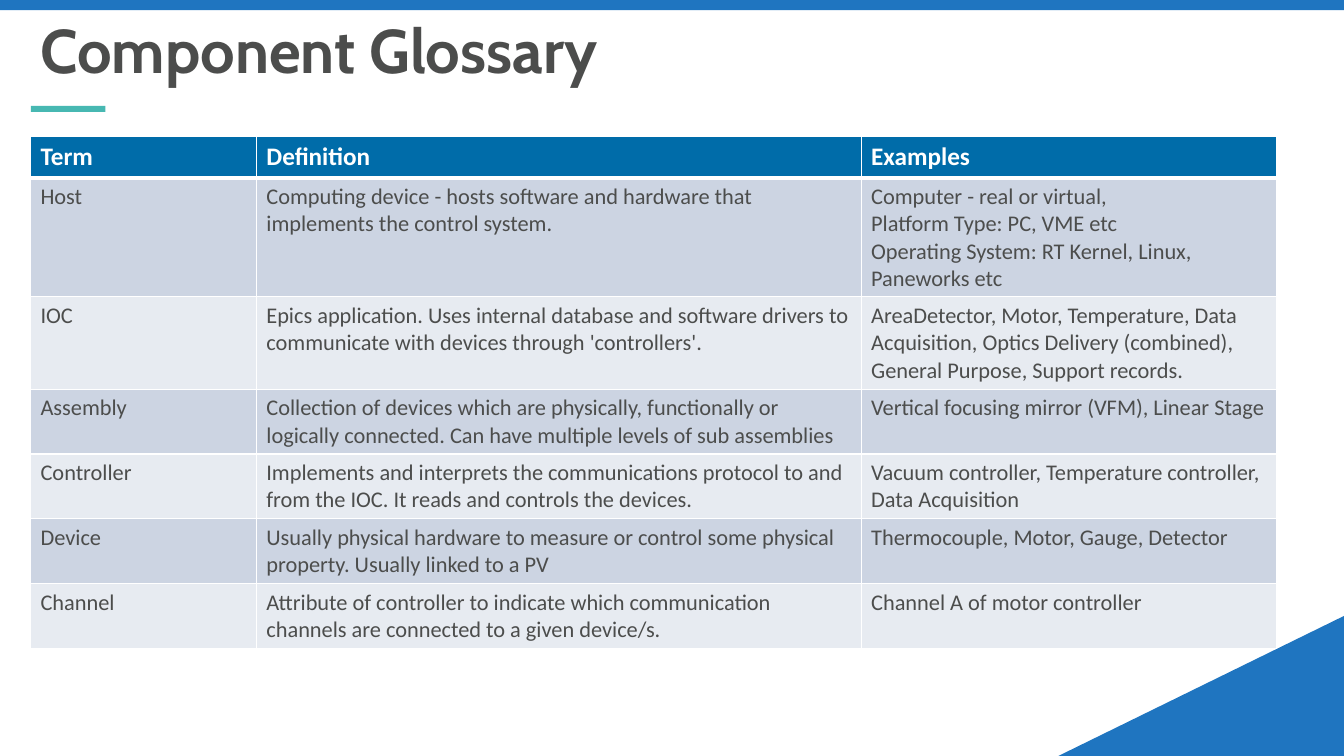
from lxml import etree
from pptx import Presentation
from pptx.dml.color import RGBColor
from pptx.enum import shapes, text
from pptx.oxml import ns
from pptx.util import Pt

BLUE, TEAL, HEADER, INK, WHITE = "1F75C0", "47B8B2", "006CA9", "4C4D4C", "FFFFFF"
BANDS = ["CCD4E2", "E7EBF1"]


def paint(target, color):
    """Give a shape or a cell a solid fill."""
    target.fill.solid()
    target.fill.fore_color.rgb = RGBColor.from_string(color)


def add_span(para, content, font, size, color, bold):
    span = para.add_run()
    span.text = content
    span.font.name = font
    span.font.size = Pt(size)
    span.font.bold = bold
    span.font.color.rgb = RGBColor.from_string(color)


deck = Presentation()
deck.slide_width, deck.slide_height = Pt(960), Pt(540)
page = deck.slides.add_slide(deck.slide_layouts[6])

# Corner triangle, top band and title accent
kinds = shapes.MSO_SHAPE
for kind, bounds, color in [
    (kinds.RIGHT_TRIANGLE, (756, 440, 204, 100), BLUE),
    (kinds.RECTANGLE, (0, 0, 960, 7.2), BLUE),
    (kinds.RECTANGLE, (22, 75.6, 53.3, 4.3), TEAL),
]:
    shape = page.shapes.add_shape(kind, *[Pt(length) for length in bounds])
    shape.shadow.inherit = False
    shape.line.fill.background()
    paint(shape, color)
    if kind == kinds.RIGHT_TRIANGLE:
        shape._element.spPr.xfrm.set("flipH", "1")

# Title
box = page.shapes.add_textbox(Pt(21.8), Pt(0), Pt(890), Pt(65.5))
box.text_frame.word_wrap = True
box.text_frame.vertical_anchor = text.MSO_ANCHOR.BOTTOM
para = box.text_frame.paragraphs[0]
para.line_spacing = 0.9
add_span(para, "Component Glossary", "Cabin", 44, INK, True)

# Glossary table
rows = [
    ("Term", "Definition", "Examples"),
    ("Host",
     "Computing device - hosts software and hardware that implements the control system.",
     "Computer - real or virtual, \nPlatform Type: PC, VME etc\n"
     "Operating System: RT Kernel, Linux, Paneworks etc"),
    ("IOC",
     "Epics application. Uses internal database and software drivers to communicate "
     "with devices through 'controllers'.",
     "AreaDetector, Motor, Temperature, Data Acquisition, Optics Delivery (combined), "
     "General Purpose, Support records."),
    ("Assembly",
     "Collection of devices which are physically, functionally or logically connected. "
     "Can have multiple levels of sub assemblies",
     "Vertical focusing mirror (VFM), Linear Stage"),
    ("Controller",
     "Implements and interprets the communications protocol to and from the IOC. "
     "It reads and controls the devices.",
     "Vacuum controller, Temperature controller, Data Acquisition"),
    ("Device",
     "Usually physical hardware to measure or control some physical property. "
     "Usually linked to a PV",
     "Thermocouple, Motor, Gauge, Detector"),
    ("Channel",
     "Attribute of controller to indicate which communication channels are connected "
     "to a given device/s.",
     "Channel A of motor controller"),
]
widths = [161.3, 432, 296.7]
heights = [29.5, 85, 66] + [46.3] * 4

frame = page.shapes.add_table(len(rows), len(widths), Pt(21.8), Pt(97.6),
                              Pt(sum(widths)), Pt(sum(heights)))
table = frame.table
for column, width in zip(table.columns, widths):
    column.width = Pt(width)

for i, (terms, height) in enumerate(zip(rows, heights)):
    table.rows[i].height = Pt(height)
    heading = i == 0
    for j, content in enumerate(terms):
        cell = table.cell(i, j)
        paint(cell, HEADER if heading else BANDS[(i - 1) % 2])
        para = cell.text_frame.paragraphs[0]
        for k, line in enumerate(content.split("\n")):
            if k:
                para.add_line_break()
            add_span(para, line, "Calibri", 18 if heading else 16,
                     WHITE if heading else INK, heading)
        properties = cell._tc.get_or_add_tcPr()
        for position, side in enumerate("LRTB"):
            thick = (heading and side == "B") or (i == 1 and side == "T")
            border = etree.Element(ns.qn("a:ln" + side), w=str(Pt(3 if thick else 1)))
            solid = etree.SubElement(border, ns.qn("a:solidFill"))
            etree.SubElement(solid, ns.qn("a:srgbClr"), val=WHITE)
            properties.insert(position, border)

deck.save("out.pptx")
